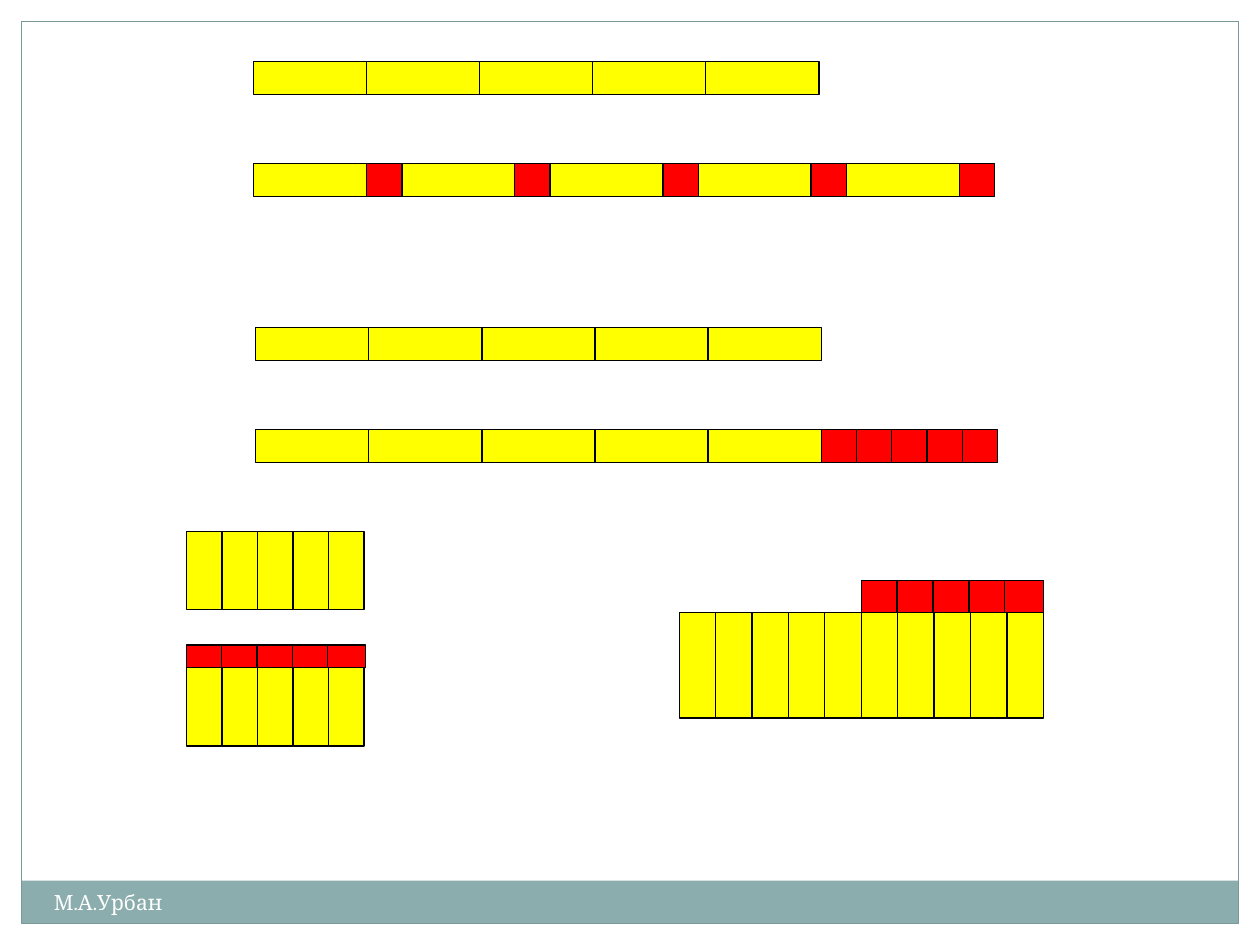
import pptx
import pptx.dml.color
import pptx.enum.shapes
import pptx.enum.text
import pptx.util

Inches = pptx.util.Inches
COLORS = {
    "yellow": "FFFF00",
    "red": "FF0000",
    "outline": "000000",
    "frame": "7C999A",
    "footer": "8CADAE",
    "white": "FFFFFF",
}
BAR_WIDTH, SMALL_WIDTH, STRIP_HEIGHT = 0.9, 0.28, 0.26
STRIP_GAP = 0.81  # from the top of one strip to the next
COUNT = 5


def rgb(name):
    return pptx.dml.color.RGBColor.from_string(COLORS[name])


def add_box(shapes, left, top, width, height, fill=None, line=None):
    shape = shapes.add_shape(
        pptx.enum.shapes.MSO_SHAPE.RECTANGLE,
        Inches(left), Inches(top), Inches(width), Inches(height))
    shape.shadow.inherit = False
    if fill:
        shape.fill.solid()
        shape.fill.fore_color.rgb = rgb(fill)
    else:
        shape.fill.background()
    if line:
        shape.line.color.rgb = rgb(line)
        shape.line.width = pptx.util.Pt(0.75)
    else:
        shape.line.fill.background()
    return shape


def add_row(shapes, left, top, count, pitch, width, height, fill):
    """Place equal outlined cells at a constant pitch."""
    for index in range(count):
        add_box(shapes, left + index * pitch, top, width, height, fill, "outline")


def add_frame(slide, left, top, width, height):
    footer_height = 0.34
    add_box(slide.shapes, left, top + height - footer_height,
            width, footer_height, fill="footer")
    add_box(slide.shapes, left, top, width, height, line="frame")


def add_strip_pair(slide, left, top, interleaved):
    """A plain strip above one whose red parts alternate or follow."""
    shapes = slide.shapes.add_group_shape().shapes
    lower_top = top + STRIP_GAP
    bar_pitch = 0.8975
    if interleaved:
        yellow_pitch = red_pitch = 1.176
        red_left = left + BAR_WIDTH
    else:
        yellow_pitch, red_pitch = bar_pitch, SMALL_WIDTH
        red_left = left + COUNT * bar_pitch
    add_row(shapes, left, top, COUNT, bar_pitch, BAR_WIDTH, STRIP_HEIGHT, "yellow")
    add_row(shapes, left, lower_top, COUNT, yellow_pitch,
            BAR_WIDTH, STRIP_HEIGHT, "yellow")
    add_row(shapes, red_left, lower_top, COUNT, red_pitch,
            SMALL_WIDTH, STRIP_HEIGHT, "red")


def add_column_pair(slide, left, top):
    """Five columns, then the same five with red caps."""
    shapes = slide.shapes.add_group_shape().shapes
    for offset in (0, 1.08):
        add_row(shapes, left, top + offset, COUNT, 0.2825,
                SMALL_WIDTH, 0.62, "yellow")
    add_row(shapes, left, top + 0.9, COUNT, 0.28, 0.3, 0.18, "red")


def add_capped_columns(slide, left, top):
    """Ten columns with red caps over the right half."""
    shapes = slide.shapes.add_group_shape().shapes
    cap_height, pitch = 0.25, 0.289
    add_row(shapes, left, top + cap_height, 2 * COUNT, pitch, 0.29, 0.84, "yellow")
    add_row(shapes, left + COUNT * pitch, top, COUNT, 0.285,
            0.31, cap_height, "red")


def add_author(slide, left, top, width, height):
    text_box = slide.shapes.add_textbox(
        Inches(left), Inches(top), Inches(width), Inches(height))
    text_frame = text_box.text_frame
    text_frame.word_wrap = True
    text_frame.vertical_anchor = pptx.enum.text.MSO_ANCHOR.TOP
    text_frame.text = "М.А.Урбан"
    font = text_frame.paragraphs[0].runs[0].font
    font.name = "Cambria"
    font.size = pptx.util.Pt(12)
    font.color.rgb = rgb("white")


def main():
    presentation = pptx.Presentation()
    presentation.slide_width = Inches(10)
    presentation.slide_height = Inches(7.5)
    slide = presentation.slides.add_slide(presentation.slide_layouts[6])

    # Page frame
    add_frame(slide, 0.17, 0.17, 9.66, 7.16)

    # Horizontal strips
    add_strip_pair(slide, 2.01, 0.49, interleaved=True)
    add_strip_pair(slide, 2.03, 2.6, interleaved=False)

    # Column diagrams
    add_column_pair(slide, 1.48, 4.22)
    add_capped_columns(slide, 5.39, 4.61)

    # Footer text
    add_author(slide, 0.33, 7.01, 3.92, 0.4)

    presentation.save("out.pptx")


if __name__ == "__main__":
    main()
